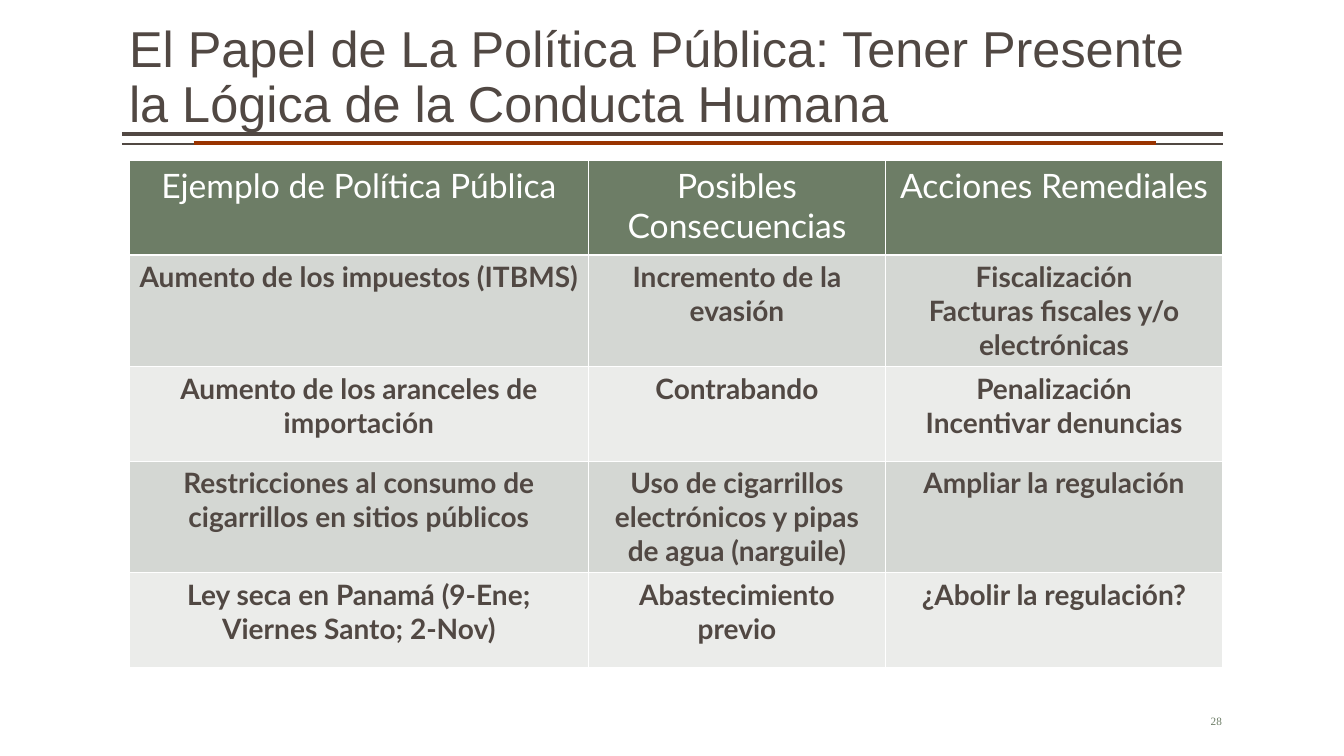
from pptx import Presentation
from pptx.dml.color import RGBColor
from pptx.enum.shapes import MSO_CONNECTOR
from pptx.enum.text import MSO_ANCHOR, MSO_AUTO_SIZE, PP_ALIGN
from pptx.oxml.ns import qn
from pptx.util import Inches, Pt
from lxml import etree

STRAIGHT = MSO_CONNECTOR.STRAIGHT
MIDDLE, BOTTOM = MSO_ANCHOR.MIDDLE, MSO_ANCHOR.BOTTOM
LEFT, CENTER, RIGHT = PP_ALIGN.LEFT, PP_ALIGN.CENTER, PP_ALIGN.RIGHT
COLORS = {
    "text": "514843", "green": "6D7D66", "rust": "993300",
    "dark": "D4D7D3", "light": "EBECEA", "white": "FFFFFF",
}


def color(name):
    return RGBColor.from_string(COLORS[name])


def style(para, font, size, tint, align, bold=False):
    para.alignment = align
    para.font.name = font
    para.font.size = Pt(size)
    para.font.bold = bold
    para.font.color.rgb = color(tint)


prs = Presentation()
prs.slide_width, prs.slide_height = Inches(13.33), Inches(7.5)
slide = prs.slides.add_slide(prs.slide_layouts[5])
shapes = slide.shapes

rules = [
    (1.21, 12.13, 1.33, "text", 3),
    (1.21, 12.13, 1.43, "text", 1),
    (1.92, 11.47, 1.42, "rust", 3),
]
for start, end, y, tint, width in rules:
    rule = shapes.add_connector(STRAIGHT, Inches(start), Inches(y), Inches(end), Inches(y))
    rule.line.color.rgb = color(tint)
    rule.line.width = Pt(width)
    etree.SubElement(rule._element.spPr, qn("a:effectLst"))

title = shapes.title
title.left, title.top = Inches(1.28), Inches(0.15)
title.width, title.height = Inches(10.85), Inches(1.22)
title.text = "El Papel de La Política Pública: Tener Presente la Lógica de la Conducta Humana"
head = title.text_frame.paragraphs[0]
style(head, "Arial", 36, "text", LEFT)
head.line_spacing = 0.9

number = shapes.add_textbox(Inches(10.12), Inches(6.95), Inches(2), Inches(0.4))
number.text_frame.text = "28"
style(number.text_frame.paragraphs[0], "Times New Roman", 8, "green", RIGHT)

for box, anchor in ((title, BOTTOM), (number, MIDDLE)):
    frame = box.text_frame
    frame.word_wrap = True
    frame.auto_size = MSO_AUTO_SIZE.NONE
    frame.vertical_anchor = anchor
    frame.margin_left = frame.margin_right = 0
    frame.margin_top = frame.margin_bottom = Inches(0.05)

rows = [
    ("Ejemplo de Política Pública", "Posibles Consecuencias", "Acciones Remediales"),
    ("Aumento de los impuestos (ITBMS)", "Incremento de la evasión",
     "Fiscalización\nFacturas fiscales y/o electrónicas"),
    ("Aumento de los aranceles de importación", "Contrabando",
     "Penalización\nIncentivar denuncias"),
    ("Restricciones al consumo de cigarrillos en sitios públicos",
     "Uso de cigarrillos electrónicos y pipas de agua (narguile)",
     "Ampliar la regulación"),
    ("Ley seca en Panamá (9-Ene; Viernes Santo; 2-Nov)", "Abastecimiento previo",
     "¿Abolir la regulación?"),
]
widths = [4.56, 2.94, 3.35]
table = shapes.add_table(len(rows), len(widths), Inches(1.28), Inches(1.59),
                         Inches(10.85), Inches(4.7)).table
for col, width in zip(table.columns, widths):
    col.width = Inches(width)

for r, row in enumerate(rows):
    table.rows[r].height = Inches(0.94)
    if r == 0:
        fill, size, tint = "green", 24, "white"
    else:
        fill, size, tint = "dark" if r % 2 else "light", 20, "text"
    for c, words in enumerate(row):
        cell = table.cell(r, c)
        cell.text = words
        for para in cell.text_frame.paragraphs:
            style(para, "Lato", size, tint, CENTER, r > 0)
        props = cell._tc.get_or_add_tcPr()
        for side in ("lnL", "lnR", "lnT", "lnB"):
            edge = etree.SubElement(props, qn(f"a:{side}"), w=str(Pt(1)))
            paint = etree.SubElement(edge, qn("a:solidFill"))
            etree.SubElement(paint, qn("a:srgbClr"), val=COLORS["white"])
        cell.fill.solid()
        cell.fill.fore_color.rgb = color(fill)

prs.save("out.pptx")
